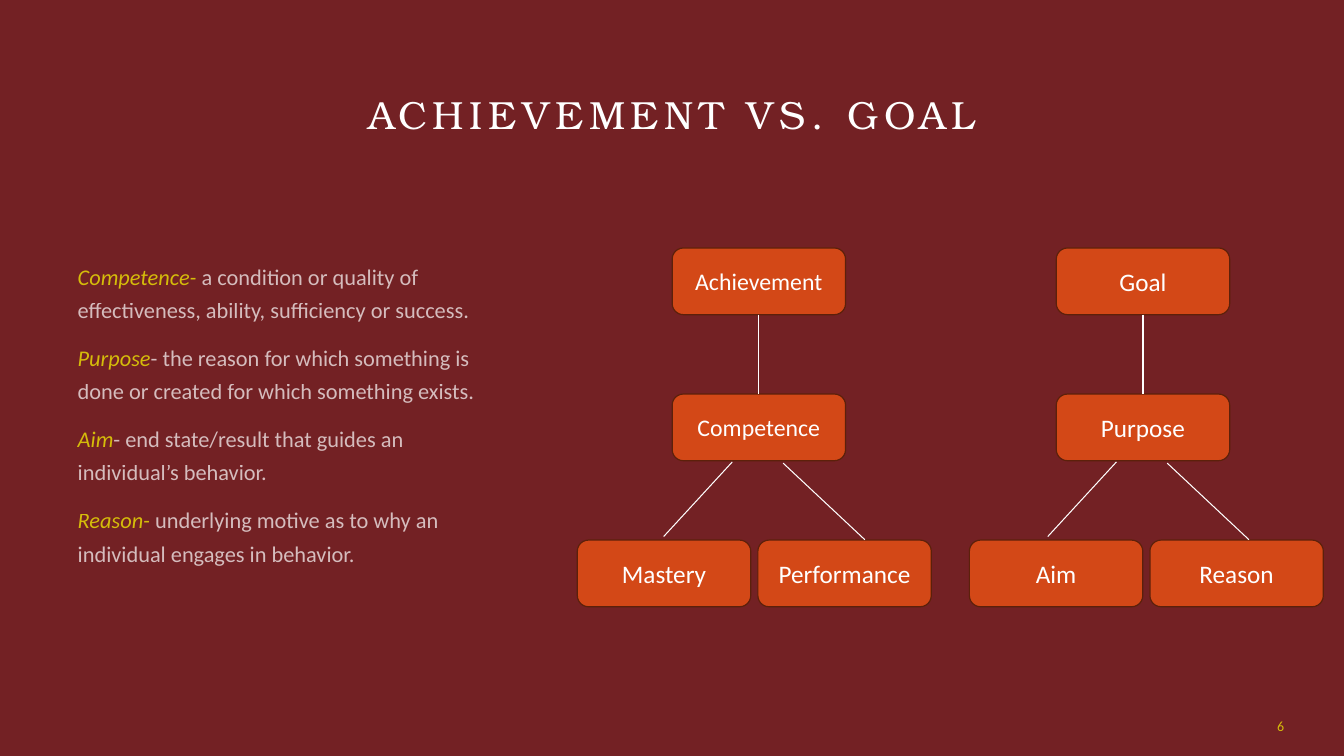
from lxml import etree
from pptx import Presentation
from pptx.dml.color import RGBColor
from pptx.enum import shapes, text
from pptx.oxml import ns
from pptx.util import Cm, Pt

WHITE, YELLOW, ORANGE, BROWN, MAROON = "FFFFFF", "FFFF00", "D34817", "5C200A", "732124"
BOX_W, BOX_H = 4.37, 1.68
ROOT_TOP, LEVEL_STEP, LEAF_STEP = 6.25, 3.68, 4.55

DEFINITIONS = [
    ("Competence-", " a condition or quality of effectiveness, ability, sufficiency or success."),
    ("Purpose", "- the reason for which something is done or created for which something exists."),
    ("Aim", "- end state/result that guides an individual’s behavior."),
    ("Reason-", " underlying motive as to why an individual engages in behavior."),
]


def paint(color_format, color):
    color_format.rgb = RGBColor.from_string(color)


def add_run(p, words, size, color=WHITE, font="Calibri", italic=False, spacing=0, alpha=100):
    r = p.add_run()
    r.text = words
    r.font.size = Pt(size)
    r.font.name = font
    r.font.italic = italic
    r.font.fill.solid()
    paint(r.font.fill.fore_color, color)
    if spacing:
        r.font._element.set("spc", str(spacing * 100))
    if alpha < 100:
        clr = r.font._element.find(".//" + ns.qn("a:srgbClr"))
        etree.SubElement(clr, ns.qn("a:alpha")).set("val", str(alpha * 1000))


def add_textbox(slide, left, top, width, height, anchor):
    sp = slide.shapes.add_textbox(Cm(left), Cm(top), Cm(width), Cm(height))
    tf = sp.text_frame
    tf.word_wrap = True
    tf.vertical_anchor = anchor
    tf.margin_left = tf.margin_right = tf.margin_top = tf.margin_bottom = 0
    return tf


def add_definitions(slide):
    tf = add_textbox(slide, 1.96, 6.45, 10.85, 8.64, text.MSO_ANCHOR.TOP)
    for i, (term, meaning) in enumerate(DEFINITIONS):
        p = tf.add_paragraph() if i else tf.paragraphs[0]
        p.line_spacing = 1.25
        p.space_before = Pt(10)
        add_run(p, term, 16, YELLOW, italic=True, alpha=70)
        add_run(p, meaning, 16, alpha=70)


def add_box(slide, left, top, label, size=18):
    sp = slide.shapes.add_shape(shapes.MSO_SHAPE.FLOWCHART_ALTERNATE_PROCESS,
                                Cm(left), Cm(top), Cm(BOX_W), Cm(BOX_H))
    sp.shadow.inherit = False
    sp.fill.solid()
    paint(sp.fill.fore_color, ORANGE)
    paint(sp.line.color, BROWN)
    sp.line.width = Pt(0.85)
    tf = sp.text_frame
    tf.word_wrap = True
    tf.vertical_anchor = text.MSO_ANCHOR.MIDDLE
    p = tf.paragraphs[0]
    p.alignment = text.PP_ALIGN.CENTER
    add_run(p, label, size)


def add_line(slide, x1, y1, x2, y2):
    line = slide.shapes.add_connector(shapes.MSO_CONNECTOR.STRAIGHT,
                                      Cm(x1), Cm(y1), Cm(x2), Cm(y2))
    paint(line.line.color, WHITE)
    line.line.width = Pt(0.75)
    etree.SubElement(line._element.spPr, ns.qn("a:effectLst"))


def add_tree(slide, left, leaf_left, trunk, leaves, trunk_size):
    for level, label in enumerate(trunk):
        add_box(slide, left, ROOT_TOP + level * LEVEL_STEP, label, trunk_size)
    leaf_top = ROOT_TOP + 2 * LEVEL_STEP
    for i, label in enumerate(leaves):
        add_box(slide, leaf_left + i * LEAF_STEP, leaf_top, label)
    center = left + BOX_W / 2
    add_line(slide, center, ROOT_TOP + BOX_H, center, ROOT_TOP + LEVEL_STEP)
    add_line(slide, center - 0.67, 11.64, center - 2.4, 13.52)
    add_line(slide, center + 0.61, 11.67, center + 2.67, 13.6)


def main():
    prs = Presentation()
    prs.slide_width, prs.slide_height = Cm(33.87), Cm(19.05)
    slide = prs.slides.add_slide(prs.slide_layouts[6])
    slide.background.fill.solid()
    paint(slide.background.fill.fore_color, MAROON)

    p = add_textbox(slide, 0, -0.13, 33.87, 3.58, text.MSO_ANCHOR.BOTTOM).paragraphs[0]
    p.alignment = text.PP_ALIGN.CENTER
    add_run(p, "ACHIEVEMENT VS. GOAL", 28, font="TeX Gyre Bonum", spacing=4)

    add_definitions(slide)
    add_tree(slide, 16.94, 14.55, ["Achievement", "Competence"], ["Mastery", "Performance"], 17)
    add_tree(slide, 26.62, 24.43, ["Goal", "Purpose"], ["Aim", "Reason"], 18)

    p = add_textbox(slide, 26.24, 17.78, 6.12, 1.02, text.MSO_ANCHOR.MIDDLE).paragraphs[0]
    p.alignment = text.PP_ALIGN.RIGHT
    add_run(p, "6", 10, YELLOW, spacing=3, alpha=70)
    prs.save("out.pptx")


if __name__ == "__main__":
    main()
